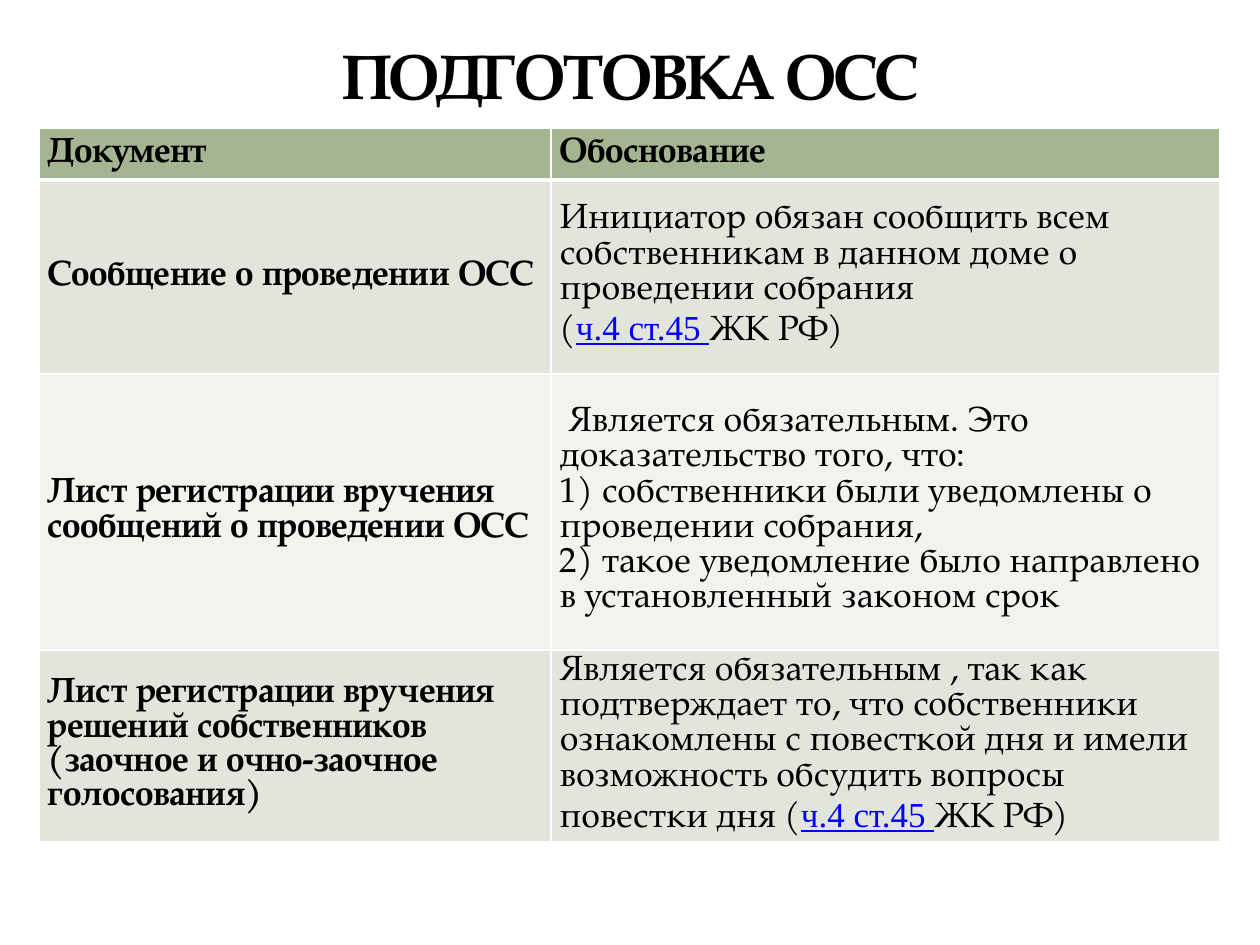
"""Build the slide listing the documents needed to prepare an owners' meeting."""
from dataclasses import dataclass

from lxml import etree
from pptx import Presentation
from pptx import util as u
from pptx.dml.color import RGBColor
from pptx.enum import text
from pptx.oxml.ns import qn

EMU_PER_PX = 914400 // 126


@dataclass(frozen=True)
class Theme:
    font: str = "TeX Gyre Pagella"
    link_font: str = "Times New Roman"
    ink: str = "000000"
    link: str = "0000FF"
    white: str = "FFFFFF"
    header: str = "A5B592"
    bands: tuple[str, str] = ("E1E5DC", "F0F3EE")
    title_pt: int = 36
    body_pt: int = 20
    border_pt: int = 1
    header_border_pt: int = 3


@dataclass(frozen=True)
class Run:
    text: str
    is_link: bool = False


@dataclass(frozen=True)
class DocumentRow:
    document: str
    basis: list[list[Run]]


THEME = Theme()
COLUMNS = (512, 669)
ROWS = (52, 194, 276, 191)
LAW = [Run("ч.4 ст.45 ", True), Run("ЖК РФ)")]
HEADER = DocumentRow("Документ", [[Run("Обоснование")]])
DOCUMENTS = [
    DocumentRow("Сообщение о проведении ОСС", [
        [Run("Инициатор обязан сообщить всем собственникам в данном доме "
             "о проведении собрания")],
        [Run("("), *LAW],
    ]),
    DocumentRow("Лист регистрации вручения сообщений о проведении ОСС", [
        [Run(" Является обязательным. Это доказательство того, что:")],
        [Run("1) собственники были уведомлены о проведении собрания,")],
        [Run("2) такое уведомление было направлено")],
        [Run("в установленный законом срок")],
    ]),
    DocumentRow("Лист регистрации вручения решений собственников "
                "(заочное и очно-заочное голосования)", [
        [Run("Является обязательным , так как подтверждает то, что собственники "
             "ознакомлены с повесткой дня и имели возможность обсудить вопросы "
             "повестки дня ("), *LAW],
    ]),
]


def px(n: int) -> u.Emu:
    """Turn whole pixels into EMU."""
    return u.Emu(n * EMU_PER_PX)


def add_run(p, content: str, *, size: int = THEME.body_pt, font: str = THEME.font,
            color: str = THEME.ink, bold: bool = False, underline: bool = False):
    """Add one formatted run to a paragraph."""
    r = p.add_run()
    r.text = content
    r.font.size = u.Pt(size)
    r.font.name = font
    r.font.color.rgb = RGBColor.from_string(color)
    r.font.bold = bold
    r.font.underline = underline
    return r


def set_borders(cell, bottom_pt: int) -> None:
    """Draw white borders around a cell."""
    tc_pr = cell._tc.get_or_add_tcPr()
    for side in "LRTB":
        width = bottom_pt if side == "B" else THEME.border_pt
        ln = etree.SubElement(tc_pr, qn(f"a:ln{side}"), w=str(u.Pt(width)))
        fill = etree.SubElement(ln, qn("a:solidFill"))
        etree.SubElement(fill, qn("a:srgbClr"), val=THEME.white)


def fill_cell(cell, paragraphs: list[list[Run]], color: str, *, bold: bool,
              bottom_pt: int = THEME.border_pt) -> None:
    """Write and format one table cell."""
    set_borders(cell, bottom_pt)
    cell.fill.solid()
    cell.fill.fore_color.rgb = RGBColor.from_string(color)
    cell.vertical_anchor = text.MSO_ANCHOR.MIDDLE
    cell.margin_left = cell.margin_right = px(9)
    cell.margin_top = cell.margin_bottom = px(5)
    tf = cell.text_frame
    for i, runs in enumerate(paragraphs):
        p = tf.add_paragraph() if i else tf.paragraphs[0]
        for run in runs:
            if run.is_link:
                add_run(p, run.text, font=THEME.link_font, color=THEME.link,
                        underline=True)
            else:
                add_run(p, run.text, bold=bold)


def add_title(s, content: str) -> None:
    """Place and format the title placeholder."""
    sp = s.shapes.title
    sp.left, sp.top, sp.width, sp.height = px(63), px(21), px(1134), px(97)
    tf = sp.text_frame
    tf.auto_size = text.MSO_AUTO_SIZE.NONE
    tf.vertical_anchor = text.MSO_ANCHOR.BOTTOM
    p = tf.paragraphs[0]
    p.alignment = text.PP_ALIGN.CENTER
    r = add_run(p, content, size=THEME.title_pt, bold=True)
    r._r.get_or_add_rPr().set("spc", "-100")


def add_documents(s) -> None:
    """Add the table of documents and their legal basis."""
    table = s.shapes.add_table(len(ROWS), len(COLUMNS), px(39), px(128),
                               px(sum(COLUMNS)), px(sum(ROWS))).table
    for column, width in zip(table.columns, COLUMNS):
        column.width = px(width)
    for row, height in zip(table.rows, ROWS):
        row.height = px(height)
    for i, item in enumerate([HEADER, *DOCUMENTS]):
        is_header = i == 0
        color = THEME.header if is_header else THEME.bands[(i - 1) % 2]
        bottom = THEME.header_border_pt if is_header else THEME.border_pt
        fill_cell(table.cell(i, 0), [[Run(item.document)]], color, bold=True,
                  bottom_pt=bottom)
        fill_cell(table.cell(i, 1), item.basis, color, bold=is_header,
                  bottom_pt=bottom)


def main() -> None:
    """Build and save the presentation."""
    prs = Presentation()
    prs.slide_width, prs.slide_height = u.Inches(10), u.Inches(7.5)
    s = prs.slides.add_slide(prs.slide_layouts[5])
    add_documents(s)
    add_title(s, "ПОДГОТОВКА ОСС")
    prs.save("out.pptx")


if __name__ == "__main__":
    main()
